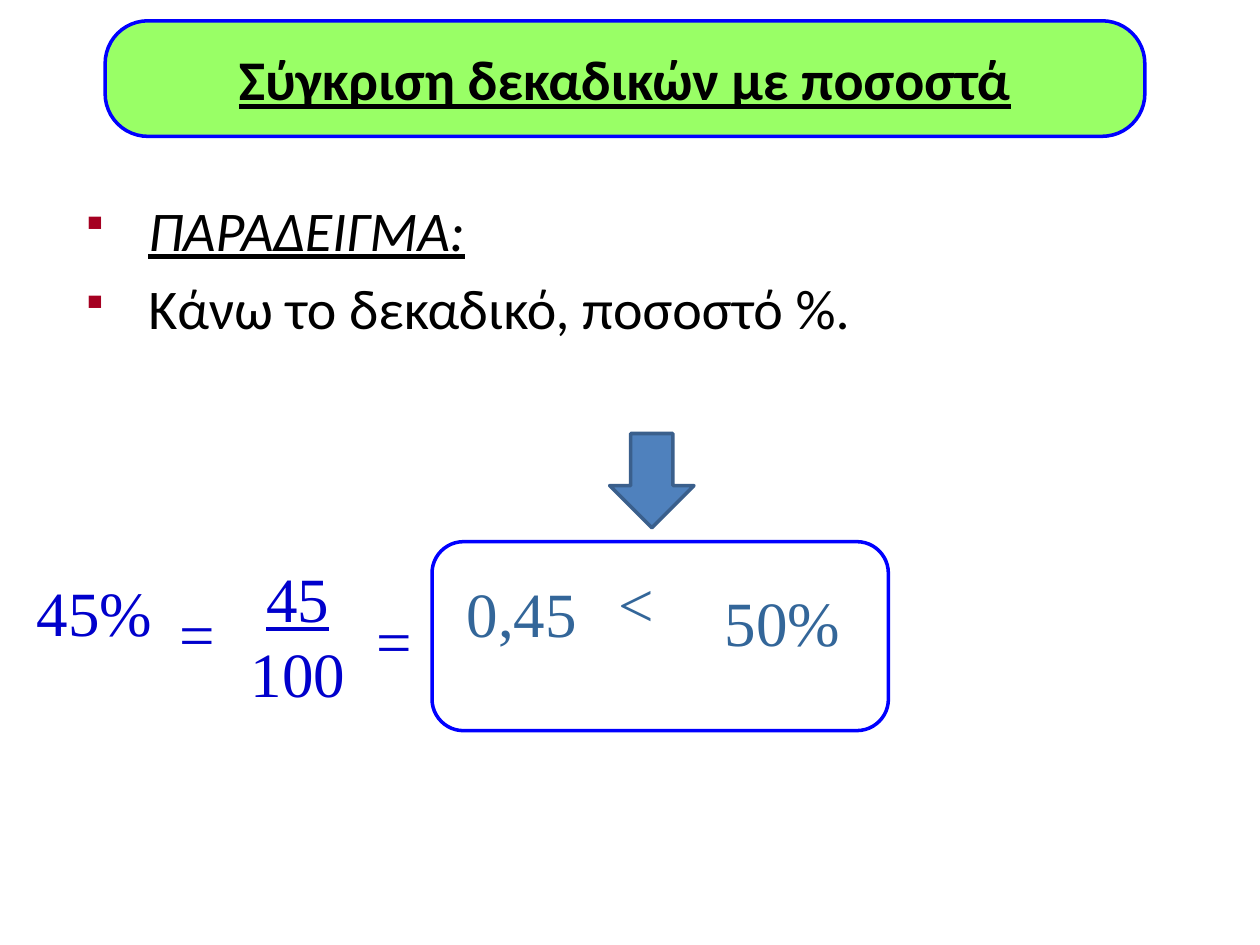
from lxml.etree import SubElement
from pptx import Presentation
from pptx.dml.color import RGBColor
from pptx.enum.shapes import MSO_SHAPE
from pptx.enum.text import MSO_ANCHOR, PP_ALIGN
from pptx.oxml.ns import qn
from pptx.util import Cm, Pt

COLORS = {
    "black": "000000",
    "bullet": "A50021",
    "title_fill": "99FF66",
    "frame": "0000FF",
    "given": "0000CC",
    "compared": "336699",
    "arrow_fill": "4F81BD",
    "arrow_line": "3A5F8C",
}
BODY_FONT = {"name": "Calibri", "size": Pt(32)}
MATH_FONT = {"name": "Times New Roman", "size": Pt(36)}
TERM_FRAME = {"word_wrap": False, "margin_left": 0, "margin_right": 0}


def color(name):
    return RGBColor.from_string(COLORS[name])


def set_attributes(target, values):
    for attribute, value in values.items():
        setattr(target, attribute, value)


def format_font(font, color_name, values):
    set_attributes(font, values)
    font.color.rgb = color(color_name)


def add_outlined_shape(slide, kind, box, line, fill=None):
    shape = slide.shapes.add_shape(kind, *map(Cm, box))
    shape.shadow.inherit = False
    if fill:
        shape.fill.solid()
        shape.fill.fore_color.rgb = color(fill)
    else:
        shape.fill.background()
    shape.line.color.rgb = color(line)
    shape.line.width = Pt(2)
    return shape


def add_title(slide, box, text):
    shape = add_outlined_shape(slide, MSO_SHAPE.ROUNDED_RECTANGLE, box, "frame", "title_fill")
    shape.adjustments[0] = 0.37
    frame = shape.text_frame
    frame.vertical_anchor = MSO_ANCHOR.MIDDLE
    paragraph = frame.paragraphs[0]
    paragraph.alignment = PP_ALIGN.CENTER
    run = paragraph.add_run()
    run.text = text
    format_font(run.font, "black", BODY_FONT | {"bold": True, "underline": True})


def add_bullet(paragraph):
    properties = paragraph._p.get_or_add_pPr()
    properties.set("marL", str(Cm(1.27)))
    properties.set("indent", str(-Cm(1.27)))
    bullet_color = SubElement(properties, qn("a:buClr"))
    SubElement(bullet_color, qn("a:srgbClr"), val=COLORS["bullet"])
    SubElement(properties, qn("a:buSzPct"), val="75000")
    SubElement(properties, qn("a:buFont"), typeface="Wingdings", charset="2")
    SubElement(properties, qn("a:buChar"), char="§")


def add_body(slide, box, lines):
    frame = slide.shapes.add_textbox(*map(Cm, box)).text_frame
    frame.word_wrap = True
    for index, (text, values) in enumerate(lines):
        paragraph = frame.add_paragraph() if index else frame.paragraphs[0]
        add_bullet(paragraph)
        if index:
            paragraph.space_before = Pt(6.4)
        run = paragraph.add_run()
        run.text = text
        format_font(run.font, "black", BODY_FONT | values)


def add_term(slide, box, lines, color_name):
    frame = slide.shapes.add_textbox(*map(Cm, box)).text_frame
    set_attributes(frame, TERM_FRAME)
    for index, text in enumerate(lines):
        paragraph = frame.add_paragraph() if index else frame.paragraphs[0]
        paragraph.alignment = PP_ALIGN.CENTER
        run = paragraph.add_run()
        run.text = text
        is_numerator = index < len(lines) - 1
        format_font(run.font, color_name, MATH_FONT | {"underline": is_numerator})


def add_comparison(slide, box):
    left, top, width, height = box
    frame_offset = 8.07
    terms = [
        (0, 0.51, 2.54, 2.54, ["45%"], "given"),
        (2.74, 0.94, 1.19, 1.6, ["="], "given"),
        (4.17, 0.23, 2.39, 3.4, ["45", "100"], "given"),
        (6.71, 1.09, 1.19, 1.6, ["="], "given"),
        (8.61, 0.53, 2.54, 2.67, ["0,45"], "compared"),
        (11.28, 0.33, 1.8, 3.4, ["<"], "compared"),
        (13.54, 0.71, 3.18, 2.36, ["50%"], "compared"),
    ]
    for x, y, term_width, term_height, lines, color_name in terms:
        add_term(slide, (left + x, top + y, term_width, term_height), lines, color_name)
    frame_box = (left + frame_offset, top, width - frame_offset, height)
    add_outlined_shape(slide, MSO_SHAPE.ROUNDED_RECTANGLE, frame_box, "frame")


def main():
    presentation = Presentation()
    presentation.slide_width = Cm(25.4)
    presentation.slide_height = Cm(19.05)
    slide = presentation.slides.add_slide(presentation.slide_layouts[6])
    add_body(slide, (1.47, 3.81, 23.01, 4.39), [
        ("ΠΑΡΑΔΕΙΓΜΑ:", {"italic": True, "underline": True}),
        ("Κάνω το δεκαδικό, ποσοστό %.", {}),
    ])
    add_comparison(slide, (0.64, 10.92, 17.27, 3.81))
    add_outlined_shape(slide, MSO_SHAPE.DOWN_ARROW, (12.29, 8.74, 1.7, 1.9), "arrow_line", "arrow_fill")
    add_title(slide, (2.12, 0.42, 20.96, 2.33), "Σύγκριση δεκαδικών με ποσοστά")
    presentation.save("out.pptx")


if __name__ == "__main__":
    main()
